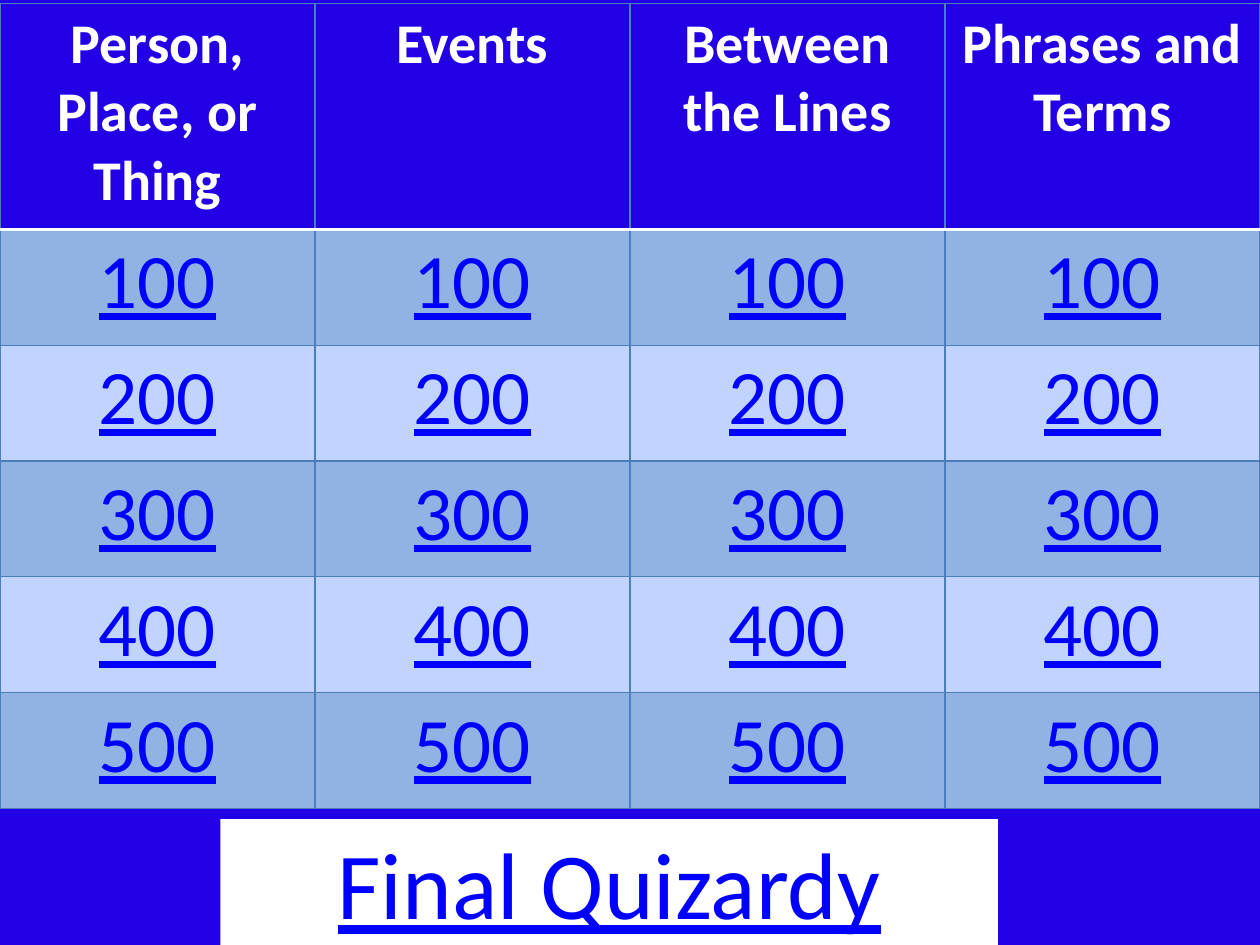
from lxml.etree import SubElement
from pptx import Presentation
from pptx.dml.color import RGBColor as RGB
from pptx.enum.shapes import MSO_SHAPE as Shape
from pptx.enum.text import MSO_ANCHOR as Anchor, PP_ALIGN as Align
from pptx.oxml.ns import qn
from pptx.util import Inches, Pt

COLORS = {
    "board": "2100E6", "grid": "4B7EBC", "white": "FFFFFF", "link": "0000FF",
    "odd": "93B2E4", "even": "C0D4FF",
}
CATEGORIES = ["Person, Place, or Thing", "Events", "Between the Lines", "Phrases and Terms"]
POINTS = [100, 200, 300, 400, 500]
HEADER_ROW, POINTS_ROW = 1.79, 0.92


def paint(fill, color):
    """Fill an object with one named colour."""
    fill.solid()
    fill.fore_color.rgb = RGB.from_string(COLORS[color])


def write(frame, words, size, color, bold=False, underline=False):
    """Write one centred paragraph."""
    paragraph = frame.paragraphs[0]
    paragraph.text = words
    paragraph.alignment = Align.CENTER
    font = paragraph.font
    font.name, font.size, font.bold, font.underline = "Calibri", Pt(size), bold, underline
    font.color.rgb = RGB.from_string(COLORS[color])


def rule_cell(cell, top, bottom):
    """Draw the four borders of a cell, each given as a colour and a width."""
    side = ("grid", 0.75)
    properties = cell._tc.get_or_add_tcPr()
    for edge, (color, width) in zip("LRTB", (side, side, top, bottom)):
        line = SubElement(properties, qn(f"a:ln{edge}"), w=str(Pt(width)))
        SubElement(SubElement(line, qn("a:solidFill")), qn("a:srgbClr"), val=COLORS[color])


def add_board(slide, left, top, width):
    """Place the table of categories and point values."""
    heights = [HEADER_ROW] + [POINTS_ROW] * len(POINTS)
    board = slide.shapes.add_table(
        len(heights), len(CATEGORIES), left, top, width, Inches(sum(heights))).table
    board.first_row = board.horz_banding = False
    thin, thick = ("grid", 0.75), ("white", 2)
    for row, height in enumerate(heights):
        board.rows[row].height = Inches(height)
        for column, category in enumerate(CATEGORIES):
            cell = board.cell(row, column)
            rule_cell(cell, thick if row == 1 else thin, thick if row == 0 else thin)
            if row == 0:
                paint(cell.fill, "board")
                write(cell.text_frame, category, 32, "white", bold=True)
            else:
                paint(cell.fill, "odd" if row % 2 else "even")
                write(cell.text_frame, str(POINTS[row - 1]), 44, "link", underline=True)


def add_final_round(slide, left, top, width, height):
    """Place the panel that leads to the last question."""
    panel = slide.shapes.add_shape(Shape.RECTANGLE, left, top, width, height)
    panel.shadow.inherit = False
    panel.line.fill.background()
    paint(panel.fill, "white")
    panel.text_frame.word_wrap = True
    panel.text_frame.vertical_anchor = Anchor.TOP
    write(panel.text_frame, "Final Quizardy", 54, "link", underline=True)


def main():
    """Build the game board slide."""
    deck = Presentation()
    deck.slide_width, deck.slide_height = Inches(10), Inches(7.5)
    slide = deck.slides.add_slide(deck.slide_layouts[6])
    paint(slide.background.fill, "board")
    add_board(slide, 0, Inches(0.03), deck.slide_width)
    add_final_round(slide, Inches(1.75), Inches(6.5), Inches(6.17), Inches(1.01))
    deck.save("out.pptx")


if __name__ == "__main__":
    main()
